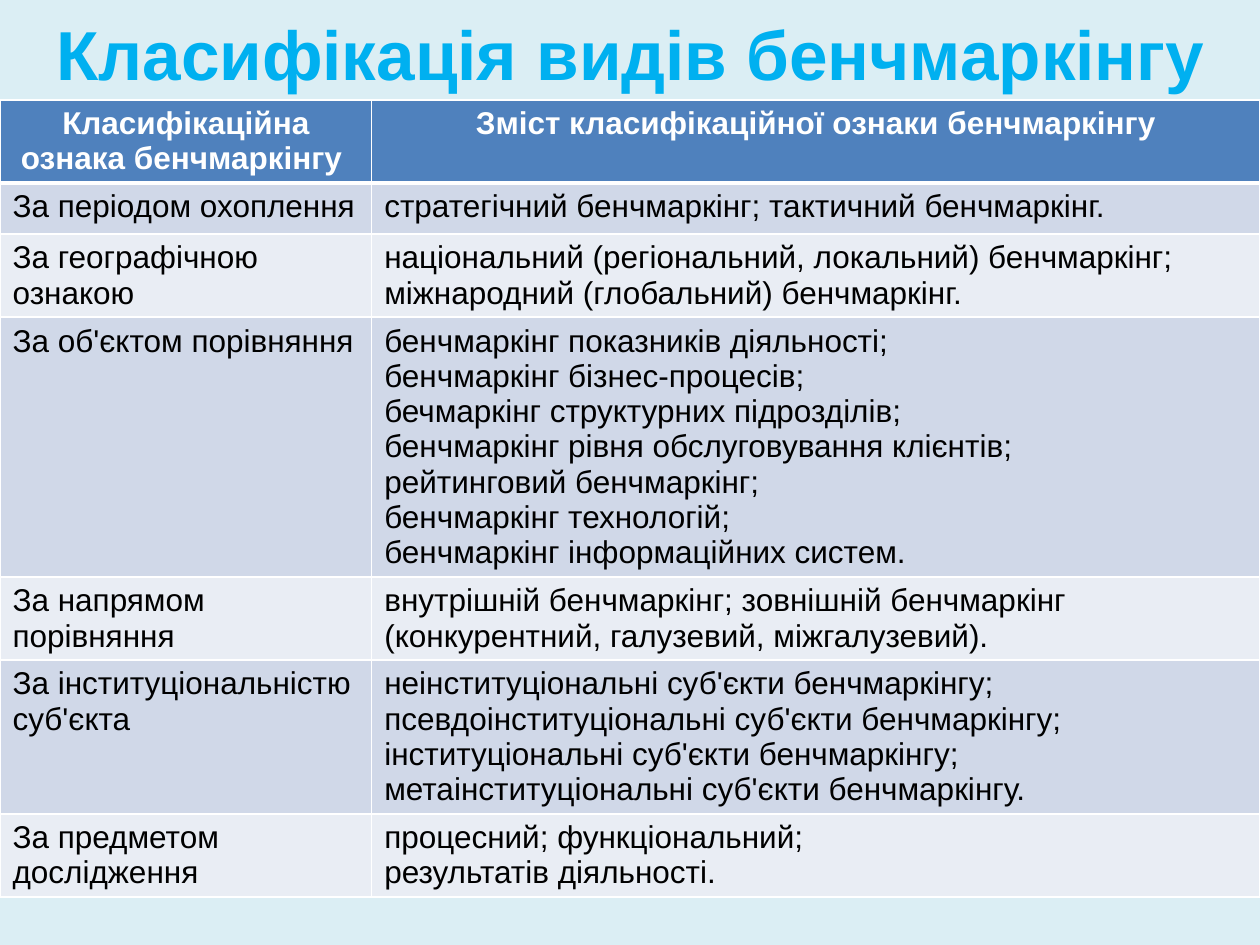
import dataclasses

import lxml.etree
import pptx
import pptx.dml.color
import pptx.enum.text
import pptx.oxml.ns
import pptx.slide
import pptx.table
import pptx.text.text
import pptx.util

Pt = pptx.util.Pt
FONT = "Arial"
COLORS = {
    "background": "DBEEF4",
    "title": "00B0F0",
    "header": "4F81BD",
    "odd": "D0D8E8",
    "even": "E9EDF4",
    "border": "FFFFFF",
    "header_text": "FFFFFF",
    "body_text": "000000",
}
COLUMN_WIDTHS = (212.4, 507.6)
TABLE_TOP = 57


@dataclasses.dataclass(frozen=True)
class Row:
    feature: str
    content: str
    height: float


ROWS = (
    Row("Класифікаційна ознака бенчмаркінгу ",
        "Зміст класифікаційної ознаки бенчмаркінгу", 47.5),
    Row("За періодом охоплення",
        "стратегічний бенчмаркінг; тактичний бенчмаркінг.", 29.2),
    Row("За географічною ознакою",
        "національний (регіональний, локальний) бенчмаркінг; "
        "міжнародний (глобальний) бенчмаркінг.", 47.5),
    Row("За об'єктом порівняння",
        "бенчмаркінг показників діяльності;\n"
        "бенчмаркінг бізнес-процесів;\n"
        "бечмаркінг структурних підрозділів;\n"
        "бенчмаркінг рівня обслуговування клієнтів;\n"
        "рейтинговий бенчмаркінг;\n"
        "бенчмаркінг технологій;\n"
        "бенчмаркінг інформаційних систем.", 148.4),
    Row("За напрямом порівняння",
        "внутрішній бенчмаркінг; зовнішній бенчмаркінг "
        "(конкурентний, галузевий, міжгалузевий).", 47.5),
    Row("За інституціональністю суб'єкта",
        "неінституціональні суб'єкти бенчмаркінгу; "
        "псевдоінституціональні суб'єкти бенчмаркінгу; "
        "інституціональні суб'єкти бенчмаркінгу; "
        "метаінституціональні суб'єкти бенчмаркінгу.", 87.6),
    Row("За предметом дослідження",
        "процесний; функціональний;\nрезультатів діяльності.", 47.5),
)


def rgb(name: str) -> pptx.dml.color.RGBColor:
    return pptx.dml.color.RGBColor.from_string(COLORS[name])


def format_text(frame: pptx.text.text.TextFrame, size: float, color: str,
                bold: bool, centered: bool) -> None:
    align = pptx.enum.text.PP_ALIGN
    for paragraph in frame.paragraphs:
        paragraph.alignment = align.CENTER if centered else align.LEFT
        paragraph.font.name = FONT
        paragraph.font.size = Pt(size)
        paragraph.font.bold = bold
        paragraph.font.color.rgb = rgb(color)


def set_borders(cell: pptx.table._Cell, top: float, bottom: float) -> None:
    qn = pptx.oxml.ns.qn
    properties = cell._tc.get_or_add_tcPr()
    for side, width in (("L", 1), ("R", 1), ("T", top), ("B", bottom)):
        line = lxml.etree.SubElement(properties, qn(f"a:ln{side}"), w=str(Pt(width)))
        fill = lxml.etree.SubElement(line, qn("a:solidFill"))
        lxml.etree.SubElement(fill, qn("a:srgbClr"), val=COLORS["border"])


def add_title(slide: pptx.slide.Slide, text: str) -> None:
    title = slide.shapes.title
    title.left, title.top, title.width, title.height = Pt(14.4), Pt(0), Pt(692), Pt(60.5)
    frame = title.text_frame
    frame.text = text
    frame.vertical_anchor = pptx.enum.text.MSO_ANCHOR.MIDDLE
    format_text(frame, 39.6, "title", bold=True, centered=True)


def add_classification(slide: pptx.slide.Slide, rows: tuple[Row, ...]) -> None:
    table = slide.shapes.add_table(
        len(rows), len(COLUMN_WIDTHS), Pt(0), Pt(TABLE_TOP),
        Pt(sum(COLUMN_WIDTHS)), Pt(sum(row.height for row in rows))).table
    for column, width in zip(table.columns, COLUMN_WIDTHS):
        column.width = Pt(width)
    for index, row in enumerate(rows):
        table.rows[index].height = Pt(row.height)
        is_header = index == 0
        fill = "header" if is_header else "odd" if index % 2 else "even"
        for cell, text in zip(table.rows[index].cells, (row.feature, row.content)):
            cell.text = text
            set_borders(cell, top=3 if index == 1 else 1, bottom=3 if is_header else 1)
            cell.fill.solid()
            cell.fill.fore_color.rgb = rgb(fill)
            format_text(cell.text_frame, 18, "header_text" if is_header else "body_text",
                        bold=is_header, centered=is_header)


def main() -> None:
    deck = pptx.Presentation()
    deck.slide_width, deck.slide_height = Pt(720), Pt(540)
    slide = deck.slides.add_slide(deck.slide_layouts.get_by_name("Title Only"))
    slide.background.fill.solid()
    slide.background.fill.fore_color.rgb = rgb("background")
    add_title(slide, "Класифікація видів бенчмаркінгу")
    add_classification(slide, ROWS)
    deck.save("out.pptx")


if __name__ == "__main__":
    main()
